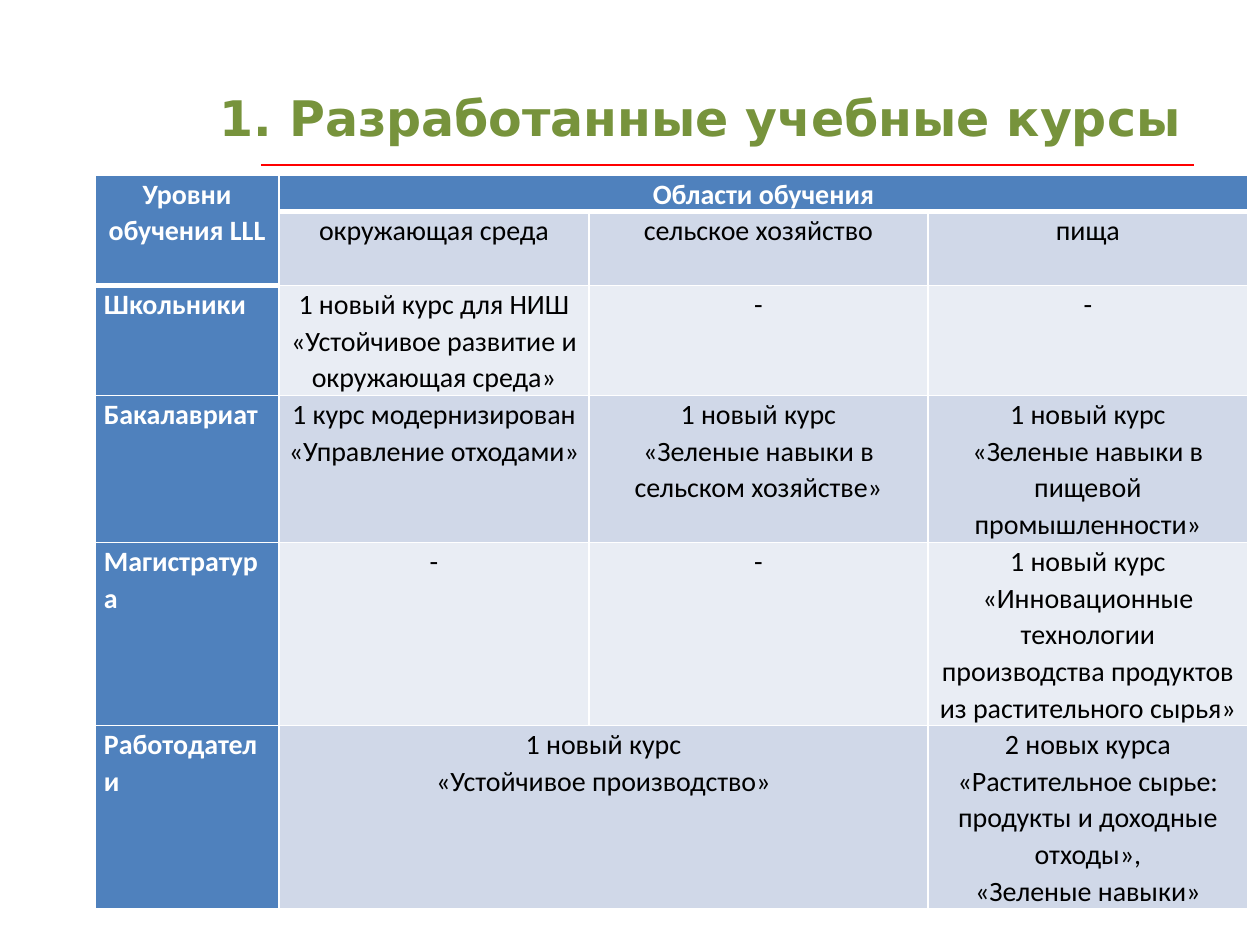
from lxml import etree
from pptx import Presentation
from pptx import util as u
from pptx.dml.color import RGBColor
from pptx.enum import shapes, text
from pptx.oxml.ns import qn

WHITE = RGBColor(0xFF, 0xFF, 0xFF)
BLACK = RGBColor(0, 0, 0)
RED = RGBColor(0xFF, 0, 0)
GREEN = RGBColor(0x77, 0x93, 0x3C)
BLUE = RGBColor(0x4F, 0x81, 0xBD)
BAND_DARK = RGBColor(0xD0, 0xD8, 0xE8)
BAND_LIGHT = RGBColor(0xE9, 0xED, 0xF4)
COLUMNS = [184, 310, 339, 320]
ROWS = [35, 74, 109, 147, 183, 183]
CELLS = [
    ["Уровни обучения LLL", "Области обучения", "", ""],
    ["", "окружающая среда", "сельское хозяйство", "пища"],
    ["Школьники", "1 новый курс для НИШ\n«Устойчивое развитие и окружающая среда»", "-", "-"],
    ["Бакалавриат", "1 курс модернизирован\n«Управление отходами»",
     "1 новый курс\n«Зеленые навыки в сельском хозяйстве»",
     "1 новый курс\n«Зеленые навыки в пищевой промышленности»"],
    ["Магистратура", "-", "-",
     "1 новый курс\n«Инновационные технологии производства продуктов из растительного сырья»"],
    ["Работодатели", "1 новый курс\n«Устойчивое производство»", "",
     "2 новых курса\n«Растительное сырье: продукты и доходные отходы»,\n«Зеленые навыки»"],
]


def px(value):
    return u.Emu(round(value * 914400 / 126))


def add_border(cell, position, side, width):
    line = etree.Element(qn("a:ln" + side), w=str(u.Pt(width)))
    fill = etree.SubElement(line, qn("a:solidFill"))
    etree.SubElement(fill, qn("a:srgbClr"), val=str(WHITE))
    cell._tc.get_or_add_tcPr().insert(position, line)


deck = Presentation()
deck.slide_width, deck.slide_height = px(1260), px(945)
page = deck.slides.add_slide(deck.slide_layouts[5])

title = page.shapes.title
for name, value in dict(left=203, top=38, width=994, height=157).items():
    setattr(title, name, px(value))
title.text_frame.text = "1. Разработанные учебные курсы"
title.text_frame.vertical_anchor = text.MSO_ANCHOR.MIDDLE
para = title.text_frame.paragraphs[0]
para.alignment = text.PP_ALIGN.CENTER
span = para.runs[0]
for name, value in dict(name="DejaVu Sans", size=u.Pt(28), bold=True).items():
    setattr(span.font, name, value)
span.font.color.rgb = GREEN

rule = page.shapes.add_connector(
    shapes.MSO_CONNECTOR.STRAIGHT, px(261), px(165), px(1194), px(165))
rule.line.color.rgb = RED
rule.line.width = u.Pt(0.75)
etree.SubElement(rule._element.spPr, qn("a:effectLst"))

table = page.shapes.add_table(
    len(ROWS), len(COLUMNS), px(95), px(175), px(sum(COLUMNS)), px(sum(ROWS))).table
for column, width in zip(table.columns, COLUMNS):
    column.width = px(width)
for row, height in zip(table.rows, ROWS):
    row.height = px(height)
for first, last in [((0, 0), (1, 0)), ((0, 1), (0, 3)), ((5, 1), (5, 2))]:
    table.cell(*first).merge(table.cell(*last))

for r, words in enumerate(CELLS):
    for c, wording in enumerate(words):
        cell = table.cell(r, c)
        header = r == 0 or c == 0
        band = BAND_DARK if r % 2 else BAND_LIGHT
        cell.fill.solid()
        cell.fill.fore_color.rgb = BLUE if header else band
        margins = dict(margin_left=9, margin_right=9, margin_top=0, margin_bottom=0)
        for name, value in margins.items():
            setattr(cell, name, px(value))
        heading_end = 1 if c == 0 else 0
        widths = dict(L=1, R=1, T=3 if r == heading_end + 1 else 1,
                      B=3 if r <= heading_end else 1)
        for position, (side, width) in enumerate(widths.items()):
            add_border(cell, position, side, width)
        if cell.is_spanned:
            continue
        cell.text_frame.text = wording
        for para in cell.text_frame.paragraphs:
            level = c == 0 and r > 1
            para.alignment = text.PP_ALIGN.JUSTIFY if level else text.PP_ALIGN.CENTER
            para.line_spacing = 1.07
            for name, value in dict(name="Calibri", size=u.Pt(16), bold=header).items():
                setattr(para.runs[0].font, name, value)
            para.runs[0].font.color.rgb = WHITE if header else BLACK

deck.save("out.pptx")
